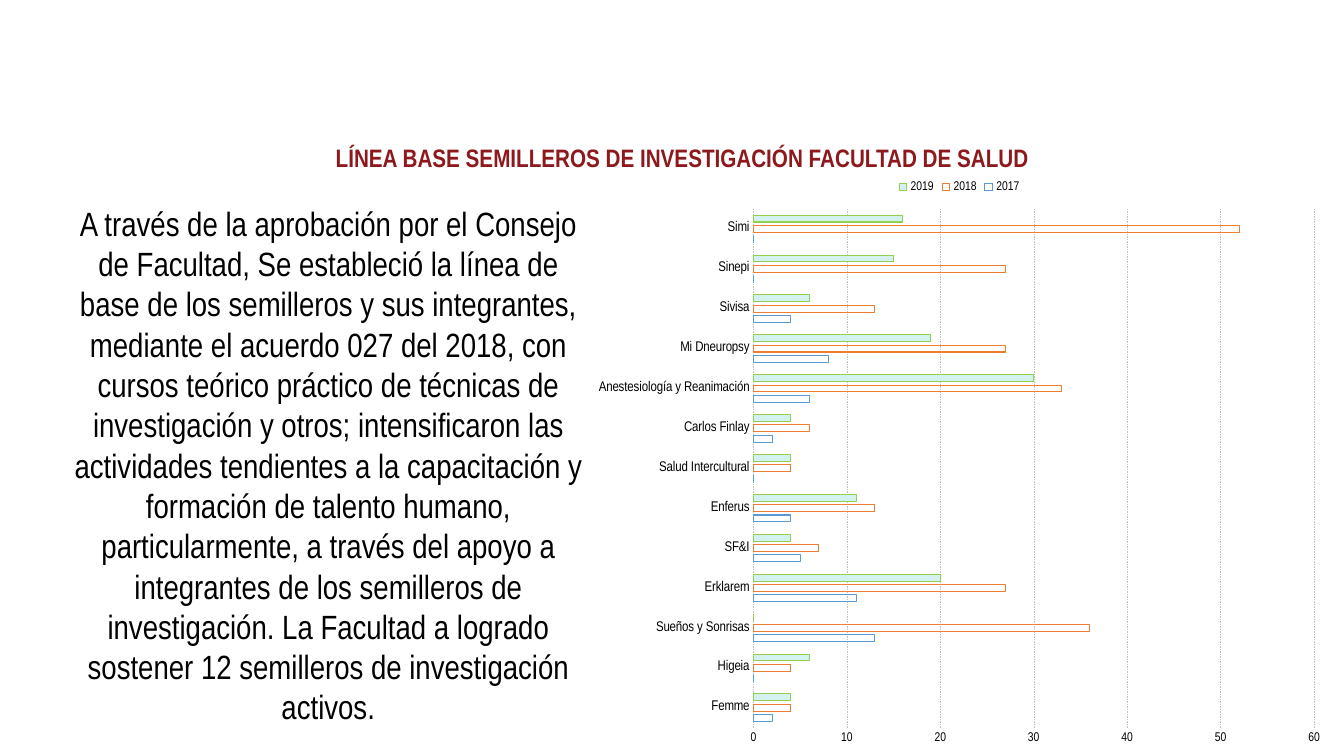
import dataclasses
import typing

import lxml.etree
import pptx
import pptx.chart.axis
import pptx.chart.chart
import pptx.chart.data
import pptx.dml.color
import pptx.dml.line
import pptx.enum.chart
import pptx.enum.dml
import pptx.enum.text
import pptx.oxml.ns
import pptx.slide
import pptx.text.text
import pptx.util

Inches = pptx.util.Inches
Pt = pptx.util.Pt


@dataclasses.dataclass(frozen=True)
class Theme:
    face: str = "Arial Narrow"
    red: str = "8D191D"
    black: str = "000000"
    grid: str = "BFBFBF"
    title: float = 18
    body: float = 24
    label: float = 10
    small: float = 9
    edge: float = 0.75
    hair: float = 0.25


@dataclasses.dataclass(frozen=True)
class Box:
    left: float
    top: float
    width: float
    height: float

    def place(self) -> tuple:
        return tuple(Inches(n) for n in (self.left, self.top, self.width, self.height))


@dataclasses.dataclass(frozen=True)
class Year:
    name: str
    line: str
    fill: typing.Optional[str]
    counts: tuple[int, ...]


THEME = Theme()
TITLE_BOX = Box(3.23, 1.36, 7.64, 0.4)
CHART_BOX = Box(5.79, 1.68, 7.45, 5.82)
BODY_BOX = Box(0.6, 1.96, 5.31, 5.35)
TITLE = "LÍNEA BASE SEMILLEROS DE INVESTIGACIÓN FACULTAD DE SALUD"
BODY = (
    "A través de la aprobación por el Consejo de Facultad, Se estableció la línea de base "
    "de los semilleros y sus integrantes, mediante el acuerdo 027 del 2018, con cursos "
    "teórico práctico de técnicas de investigación y otros; intensificaron las actividades "
    "tendientes a la capacitación y formación de talento humano, particularmente, a través "
    "del apoyo a integrantes de los semilleros de investigación. La Facultad a logrado "
    "sostener 12 semilleros de investigación activos."
)
GROUPS = (
    "Femme", "Higeia", "Sueños y Sonrisas", "Erklarem", "SF&I", "Enferus",
    "Salud Intercultural", "Carlos Finlay", "Anestesiología y Reanimación",
    "Mi Dneuropsy", "Sivisa", "Sinepi", "Simi",
)
YEARS = (
    Year("2017", "5B9BD5", None, (2, 0, 13, 11, 5, 4, 0, 2, 6, 8, 4, 0, 0)),
    Year("2018", "ED7D31", None, (4, 4, 36, 27, 7, 13, 4, 6, 33, 27, 13, 27, 52)),
    Year("2019", "92D050", "D3F2EF", (4, 6, 0, 20, 4, 11, 4, 4, 30, 19, 6, 15, 16)),
)


def tint(code: str) -> pptx.dml.color.RGBColor:
    return pptx.dml.color.RGBColor.from_string(code)


def set_font(font: pptx.text.text.Font, size: float, color: str, bold: bool = False) -> None:
    font.name = THEME.face
    font.size = Pt(size)
    font.bold = bold
    font.color.rgb = tint(color)


def set_line(line: pptx.dml.line.LineFormat, color: str, width: float) -> None:
    line.color.rgb = tint(color)
    line.width = Pt(width)


def add_text(frame: pptx.text.text.TextFrame, text: str, align: int) -> pptx.text.text.Font:
    frame.word_wrap = True
    frame.auto_size = pptx.enum.text.MSO_AUTO_SIZE.SHAPE_TO_FIT_TEXT
    frame.vertical_anchor = pptx.enum.text.MSO_ANCHOR.TOP
    para = frame.paragraphs[0]
    para.alignment = align
    run = para.add_run()
    run.text = text
    return run.font


def add_edge(run: pptx.text.text._Run, color: str, width: float) -> None:
    tag = pptx.oxml.ns.qn
    edge = lxml.etree.Element(tag("a:ln"), w=str(int(Pt(width))))
    fill = lxml.etree.SubElement(edge, tag("a:solidFill"))
    lxml.etree.SubElement(fill, tag("a:srgbClr"), val=color)
    run._r.get_or_add_rPr().insert(0, edge)


def add_title(slide: pptx.slide.Slide) -> None:
    shape = slide.shapes.title
    shape.left, shape.top, shape.width, shape.height = TITLE_BOX.place()
    font = add_text(shape.text_frame, TITLE, pptx.enum.text.PP_ALIGN.LEFT)
    set_font(font, THEME.title, THEME.red, True)
    add_edge(shape.text_frame.paragraphs[0].runs[0], THEME.red, THEME.edge)


def add_body(slide: pptx.slide.Slide) -> None:
    frame = slide.shapes.add_textbox(*BODY_BOX.place()).text_frame
    font = add_text(frame, BODY, pptx.enum.text.PP_ALIGN.CENTER)
    set_font(font, THEME.body, THEME.black)


def set_axis(axis: pptx.chart.axis._BaseAxis, size: float) -> None:
    axis.major_tick_mark = pptx.enum.chart.XL_TICK_MARK.NONE
    axis.minor_tick_mark = pptx.enum.chart.XL_TICK_MARK.NONE
    axis.format.line.fill.background()
    set_font(axis.tick_labels.font, size, THEME.black)


def style_bars(chart: pptx.chart.chart.Chart) -> None:
    plot = chart.plots[0]
    plot.gap_width = 182
    plot.overlap = -50
    plot.vary_by_categories = False
    for year, bars in zip(YEARS, plot.series):
        bars.invert_if_negative = False
        if year.fill:
            bars.format.fill.solid()
            bars.format.fill.fore_color.rgb = tint(year.fill)
        else:
            bars.format.fill.background()
        set_line(bars.format.line, year.line, THEME.edge)


def add_chart(slide: pptx.slide.Slide) -> None:
    data = pptx.chart.data.CategoryChartData(number_format="General")
    data.categories = GROUPS
    for year in YEARS:
        data.add_series(year.name, year.counts)
    kind = pptx.enum.chart.XL_CHART_TYPE.BAR_CLUSTERED
    chart = slide.shapes.add_chart(kind, *CHART_BOX.place(), data).chart
    set_font(chart.font, THEME.label, THEME.black)
    chart.has_title = False
    chart.has_legend = True
    chart.legend.position = pptx.enum.chart.XL_LEGEND_POSITION.TOP
    chart.legend.include_in_layout = False
    set_font(chart.legend.font, THEME.small, THEME.black)
    set_axis(chart.category_axis, THEME.label)
    scale = chart.value_axis
    set_axis(scale, THEME.small)
    scale.minimum_scale, scale.maximum_scale, scale.major_unit = 0, 60, 10
    scale.has_major_gridlines = True
    grid = scale.major_gridlines.format.line
    set_line(grid, THEME.grid, THEME.hair)
    grid.dash_style = pptx.enum.dml.MSO_LINE.DASH
    style_bars(chart)


def main() -> None:
    deck = pptx.Presentation()
    deck.slide_width = Inches(13.33)
    deck.slide_height = Inches(7.5)
    slide = deck.slides.add_slide(deck.slide_layouts.get_by_name("Title Only"))
    add_title(slide)
    add_chart(slide)
    add_body(slide)
    deck.save("out.pptx")


if __name__ == "__main__":
    main()
